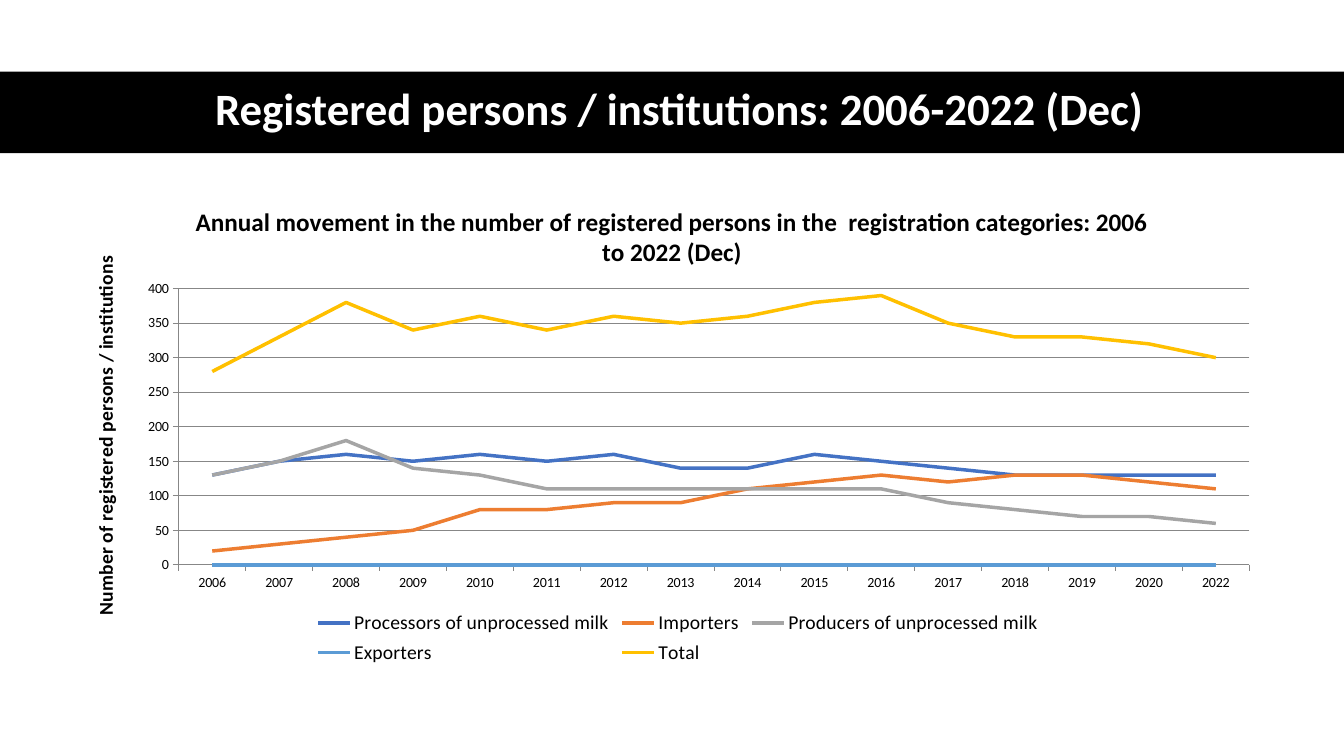
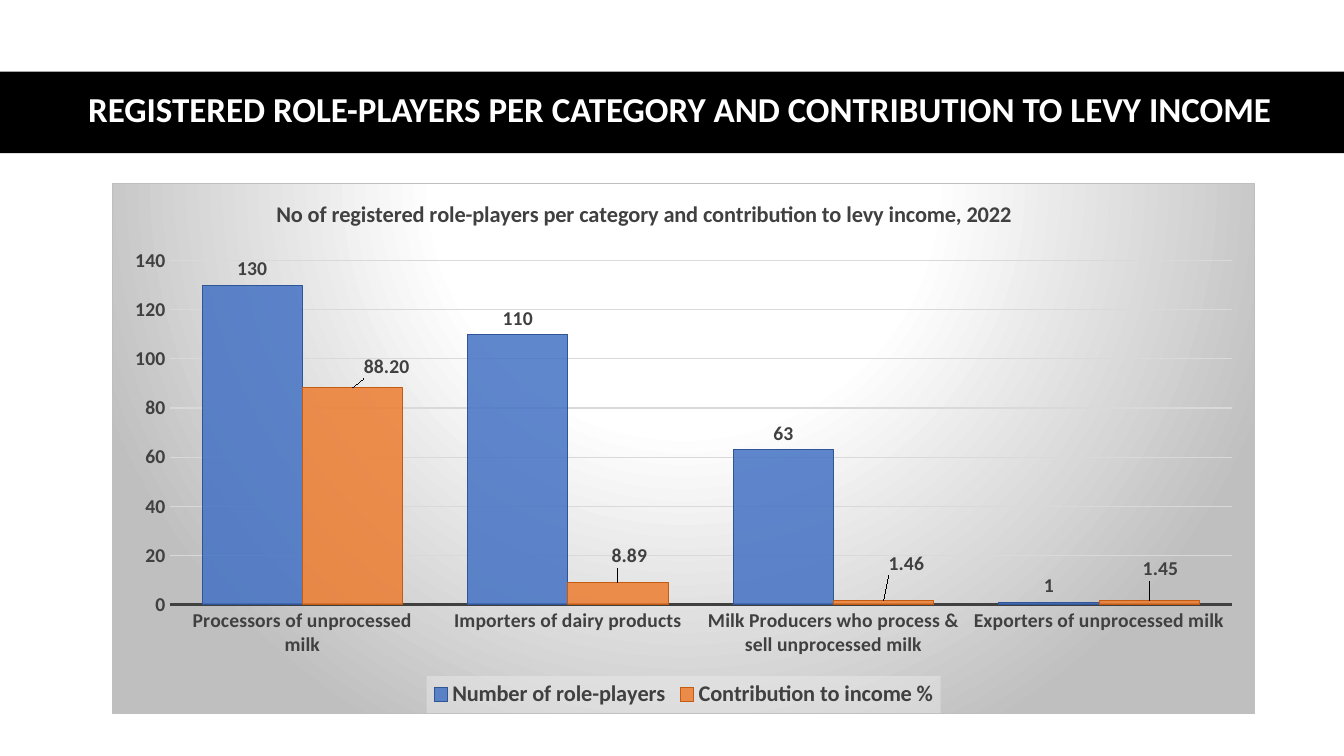
import pptx
import pptx.chart.data
import pptx.dml.color
import pptx.enum.chart
import pptx.enum.shapes
import pptx.enum.text
import pptx.oxml
import pptx.oxml.ns
import pptx.util

Inches, Pt = pptx.util.Inches, pptx.util.Pt
RGBColor = pptx.dml.color.RGBColor
ChartType = pptx.enum.chart.XL_CHART_TYPE
TickMark = pptx.enum.chart.XL_TICK_MARK
qn, nsdecls = pptx.oxml.ns.qn, pptx.oxml.ns.nsdecls

BLACK = RGBColor(0x00, 0x00, 0x00)
WHITE = RGBColor(0xFF, 0xFF, 0xFF)
DARK_GREY = RGBColor(0x40, 0x40, 0x40)
AXIS_GREY = RGBColor(0x87, 0x87, 0x87)
GRID_GREY = RGBColor(0xD9, 0xD9, 0xD9)
BLUE = RGBColor(0x44, 0x72, 0xC4)
ORANGE = RGBColor(0xED, 0x7D, 0x31)
GREY = RGBColor(0xA5, 0xA5, 0xA5)
LIGHT_BLUE = RGBColor(0x5B, 0x9B, 0xD5)
GOLD = RGBColor(0xFF, 0xC0, 0x00)
DARK_BLUE = RGBColor(0x2F, 0x55, 0x97)
DARK_ORANGE = RGBColor(0xC5, 0x5A, 0x11)


def set_font(font, **values):
    for name, value in {"name": "Calibri", **values}.items():
        if name == "color":
            font.color.rgb = value
        else:
            setattr(font, name, value)


def place(part, index, inner=False, **fractions):
    """Place a chart part by fractions of the chart's size."""
    for old_layout in part.findall(qn("c:layout")):
        part.remove(old_layout)
    settings = {"layoutTarget": "inner"} if inner else {}
    if "w" in fractions:
        settings.update(xMode="edge", yMode="edge")
    settings.update(fractions)
    children = "".join(f'<c:{name} val="{value}"/>' for name, value in settings.items())
    part.insert(index, pptx.oxml.parse_xml(
        f'<c:layout {nsdecls("c")}><c:manualLayout>{children}</c:manualLayout></c:layout>'))


# What the two slides hold
slides = [
    {
        "title": "Registered persons / institutions: 2006-2022 (Dec)",
        "title_size": 32,
        "type": ChartType.LINE,
        "at": (0.7, 1.83, 11.93, 4.81),
        "chart_title": "Annual movement in the number of registered persons in the  "
                       "registration categories: 2006 to 2022 (Dec)",
        "chart_title_size": 18,
        "color": BLACK,
        "legend_font": {"size": Pt(14), "bold": False},
        "axis_font": {"size": Pt(10), "bold": False},
        "tick": TickMark.OUTSIDE,
        "grid": AXIS_GREY,
        "top": 400,
        "step": 50,
        "plot": {"x": 0.09, "y": 0.215, "w": 0.89, "h": 0.57},
        "legend": {"x": 0.2, "y": 0.87, "w": 0.61, "h": 0.13},
        "categories": [str(year) for year in range(2006, 2023) if year != 2021],
        "series": [
            ("Processors of unprocessed milk", BLUE,
             [130, 150, 160, 150, 160, 150, 160, 140, 140, 160, 150, 140, 130, 130, 130, 130]),
            ("Importers", ORANGE,
             [20, 30, 40, 50, 80, 80, 90, 90, 110, 120, 130, 120, 130, 130, 120, 110]),
            ("Producers of unprocessed milk", GREY,
             [130, 150, 180, 140, 130, 110, 110, 110, 110, 110, 110, 90, 80, 70, 70, 60]),
            ("Exporters", LIGHT_BLUE, [0] * 16),
            ("Total", GOLD,
             [280, 330, 380, 340, 360, 340, 360, 350, 360, 380, 390, 350, 330, 330, 320, 300]),
        ],
    },
    {
        "title": "REGISTERED ROLE-PLAYERS PER CATEGORY AND CONTRIBUTION TO LEVY INCOME",
        "title_size": 25,
        "type": ChartType.COLUMN_CLUSTERED,
        "at": (1.11, 1.82, 11.34, 5.26),
        "chart_title": "No of registered role-players per category and "
                       "contribution to levy income, 2022",
        "chart_title_size": 16,
        "color": DARK_GREY,
        "legend_font": {"size": Pt(16), "bold": True},
        "axis_font": {"size": Pt(14), "bold": True},
        "tick": TickMark.NONE,
        "grid": GRID_GREY,
        "top": 140,
        "step": 20,
        "plot": {"x": 0.05, "y": 0.145, "w": 0.93, "h": 0.65},
        "legend": {"x": 0.275, "y": 0.93, "w": 0.45, "h": 0.07},
        "categories": ["Processors of unprocessed milk", "Importers of dairy products",
                       "Milk Producers who process & sell unprocessed milk",
                       "Exporters of unprocessed milk"],
        "series": [
            ("Number of role-players", BLUE, [130, 110, 63, 1]),
            ("Contribution to income %", ORANGE, [88.2, 8.89, 1.46, 1.45]),
        ],
    },
]

deck = pptx.Presentation()
deck.slide_width, deck.slide_height = Inches(13.33), Inches(7.5)
charts = []

for content in slides:
    page = deck.slides.add_slide(deck.slide_layouts[5])

    # Title on a black band
    title = page.shapes.title
    title.left, title.top, title.width, title.height = map(Inches, (0.61, 0.7, 12.26, 0.81))
    title.text = content["title"]
    title.text_frame.auto_size = pptx.enum.text.MSO_AUTO_SIZE.NONE
    title.text_frame.vertical_anchor = pptx.enum.text.MSO_ANCHOR.MIDDLE
    para = title.text_frame.paragraphs[0]
    para.alignment = pptx.enum.text.PP_ALIGN.CENTER
    para.line_spacing = 0.9
    set_font(para.runs[0].font, size=Pt(content["title_size"]), bold=True, color=WHITE)

    band = page.shapes.add_shape(pptx.enum.shapes.MSO_SHAPE.RECTANGLE,
                                 0, Inches(0.71), deck.slide_width, Inches(0.81))
    band.shadow.inherit = False
    band.fill.solid()
    band.fill.fore_color.rgb = BLACK
    band.line.fill.background()
    title.element.addprevious(band.element)

    # Chart with its title and legend
    data = pptx.chart.data.CategoryChartData()
    data.categories = content["categories"]
    for name, color, values in content["series"]:
        data.add_series(name, values)
    chart = page.shapes.add_chart(content["type"], *map(Inches, content["at"]), data).chart
    charts.append(chart)
    set_font(chart.font, size=Pt(10), color=BLACK)
    chart.has_title = True
    chart.chart_title.include_in_layout = False
    chart.chart_title.text_frame.text = content["chart_title"]
    set_font(chart.chart_title.text_frame.paragraphs[0].runs[0].font, bold=True,
             size=Pt(content["chart_title_size"]), color=content["color"])
    chart.has_legend = True
    chart.legend.position = pptx.enum.chart.XL_LEGEND_POSITION.BOTTOM
    chart.legend.include_in_layout = False
    set_font(chart.legend.font, color=content["color"], **content["legend_font"])
    place(chart.element.find(".//" + qn("c:legend")), 1, **content["legend"])
    place(chart.element.find(".//" + qn("c:plotArea")), 0, inner=True, **content["plot"])
    chart.plots[0].vary_by_categories = False

    # Axes and grid
    for axis in (chart.category_axis, chart.value_axis):
        axis.major_tick_mark = content["tick"]
        axis.minor_tick_mark = TickMark.NONE
        axis.format.line.color.rgb = AXIS_GREY
        axis.format.line.width = Pt(0.75)
        set_font(axis.tick_labels.font, color=content["color"], **content["axis_font"])
    scale = {"minimum_scale": 0, "maximum_scale": content["top"],
             "major_unit": content["step"], "has_major_gridlines": True}
    for name, value in scale.items():
        setattr(chart.value_axis, name, value)
    grid_line = chart.value_axis.major_gridlines.format.line
    grid_line.color.rgb = content["grid"]
    grid_line.width = Pt(0.75)

line_chart, column_chart = charts

# Line chart: axis title and lines
axis_title = line_chart.value_axis.axis_title
axis_title.text_frame.text = "Number of registered persons / institutions"
set_font(axis_title.text_frame.paragraphs[0].runs[0].font, size=Pt(14), bold=True, color=BLACK)
axis_title.element.find(".//" + qn("a:bodyPr")).set("rot", "-5400000")
for series, (name, color, values) in zip(line_chart.plots[0].series, slides[0]["series"]):
    series.smooth = False
    series.format.line.color.rgb = color
    series.format.line.width = Pt(2.5)

# Column chart: axis lines and title place
column_chart.value_axis.format.line.fill.background()
column_chart.category_axis.format.line.color.rgb = DARK_GREY
column_chart.category_axis.format.line.width = Pt(1.5)
place(column_chart.chart_title.element, 1, xMode="edge", yMode="edge", x=0.14, y=0.02)

# Translucent columns with value labels
plot = column_chart.plots[0]
plot.gap_width, plot.overlap = 65, 0
label_font = {"size": Pt(14), "bold": True, "color": DARK_GREY}
looks = zip(plot.series, slides[1]["series"], (DARK_BLUE, DARK_ORANGE), ("General", "0.00"))
for series, (name, color, values), edge, number_format in looks:
    series.format.fill.solid()
    series.format.fill.fore_color.rgb = color
    series.format.line.color.rgb = edge
    series.format.line.width = Pt(0.75)
    labels = series.data_labels
    label_settings = {"show_value": True, "number_format": number_format,
                      "number_format_is_linked": False,
                      "position": pptx.enum.chart.XL_LABEL_POSITION.OUTSIDE_END}
    for key, value in label_settings.items():
        setattr(labels, key, value)
    set_font(labels.font, **label_font)
for paint in column_chart.element.iterfind(
        ".//" + "/".join(map(qn, ("c:ser", "c:spPr", "a:solidFill", "a:srgbClr")))):
    paint.append(pptx.oxml.parse_xml(f'<a:alpha {nsdecls("a")} val="85000"/>'))

# Labels of the second series, shifted from their columns
shifts = [(0.03, -0.01), (0.01, -0.02), (0.02, -0.04), (0.01, -0.03)]
for number, (right, down) in enumerate(shifts):
    label = plot.series[1].points[number].data_label
    set_font(label.font, **label_font)
    label.position = pptx.enum.chart.XL_LABEL_POSITION.OUTSIDE_END
for spot, (right, down) in zip(column_chart.element.iter(qn("c:dLbl")), shifts):
    place(spot, 1, x=right, y=down)

# Gradient behind the column chart, pale fill behind its legend
stops = "".join(f'<a:gs pos="{position}"><a:srgbClr val="{color}"/></a:gs>'
                for position, color in ((0, WHITE), (39000, WHITE), (100000, "BFBFBF")))
column_chart.element.find(qn("c:chart")).addnext(pptx.oxml.parse_xml(
    f'<c:spPr {nsdecls("c", "a")}><a:gradFill><a:gsLst>{stops}</a:gsLst>'
    '<a:path path="circle"><a:fillToRect l="50000" t="-80000" r="50000" b="180000"/></a:path>'
    '</a:gradFill><a:ln w="9525"><a:solidFill><a:srgbClr val="BFBFBF"/></a:solidFill></a:ln>'
    '</c:spPr>'))
column_chart.element.find(".//" + qn("c:legend")).find(qn("c:txPr")).addprevious(
    pptx.oxml.parse_xml(
        f'<c:spPr {nsdecls("c", "a")}><a:solidFill><a:srgbClr val="F2F2F2">'
        '<a:alpha val="39000"/></a:srgbClr></a:solidFill></c:spPr>'))

deck.save("out.pptx")
